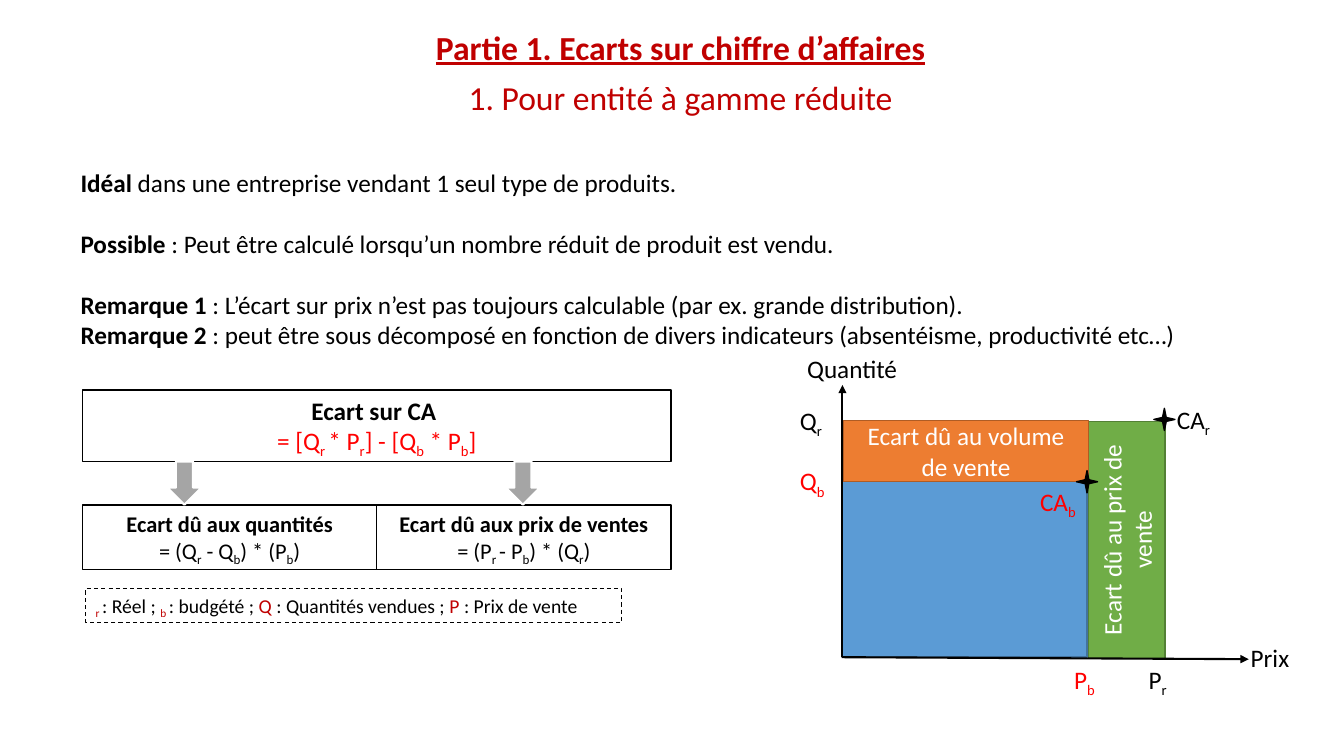
from dataclasses import dataclass
from lxml import etree
from pptx import Presentation
from pptx.dml.color import RGBColor
from pptx.enum.dml import MSO_LINE
from pptx.enum.shapes import MSO_CONNECTOR, MSO_SHAPE
from pptx.enum.text import MSO_ANCHOR, PP_ALIGN
from pptx.oxml.ns import qn
from pptx.util import Cm, Pt

RECT, ARROW, STAR = MSO_SHAPE.RECTANGLE, MSO_SHAPE.DOWN_ARROW, MSO_SHAPE.STAR_4_POINT
LEFT, CENTER = PP_ALIGN.LEFT, PP_ALIGN.CENTER
TOP, MIDDLE = MSO_ANCHOR.TOP, MSO_ANCHOR.MIDDLE
STRAIGHT, DASH = MSO_CONNECTOR.STRAIGHT, MSO_LINE.DASH
BLACK, WHITE, RED, DARK_RED = "000000", "FFFFFF", "FF0000", "C00000"


def rgb(value):
    return RGBColor.from_string(value)


@dataclass
class Span:
    text: str
    color: str = BLACK
    bold: bool = False
    underline: bool = False
    subscript: bool = False


def formula(text, color=BLACK):
    return [Span(part, color, subscript=index % 2 == 1)
            for index, part in enumerate(text.split("|")) if part]


class SlideBuilder:
    font = "Calibri"

    def __init__(self, deck):
        self.page = deck.slides.add_slide(deck.slide_layouts[5])

    def fill_text(self, frame, lines, size=18, align=LEFT, anchor=TOP):
        frame.word_wrap = True
        frame.vertical_anchor = anchor
        for index, spans in enumerate(lines):
            para = frame.paragraphs[0] if index == 0 else frame.add_paragraph()
            para.alignment = align
            for item in spans:
                span = para.add_run()
                span.text = item.text
                span.font.name = self.font
                span.font.size = Pt(size)
                span.font.bold = item.bold
                span.font.underline = item.underline
                span.font.color.rgb = rgb(item.color)
                if item.subscript:
                    span.font._element.set("baseline", "-25000")

    def title(self, left, top, width, height, lines):
        box = self.page.shapes.title
        box.left, box.top, box.width, box.height = map(Cm, (left, top, width, height))
        self.fill_text(box.text_frame, lines, 24, CENTER)
        for para in box.text_frame.paragraphs:
            para.line_spacing = 0.9
            para.space_before = Pt(10)

    def text(self, left, top, width, height, lines):
        box = self.page.shapes.add_textbox(*map(Cm, (left, top, width, height)))
        self.fill_text(box.text_frame, lines)
        return box.text_frame

    def shape(self, kind, left, top, width, height, fill, line, weight=1):
        box = self.page.shapes.add_shape(kind, *map(Cm, (left, top, width, height)))
        box.shadow.inherit = False
        if fill:
            box.fill.solid()
            box.fill.fore_color.rgb = rgb(fill)
        else:
            box.fill.background()
        box.line.color.rgb = rgb(line)
        box.line.width = Pt(weight)
        return box

    def axis(self, *ends):
        line = self.page.shapes.add_connector(STRAIGHT, *map(Cm, ends))
        line.line.color.rgb = rgb(BLACK)
        line.line.width = Pt(1.5)
        properties = line._element.spPr
        etree.SubElement(properties.find(qn("a:ln")), qn("a:tailEnd"), type="triangle")
        etree.SubElement(properties, qn("a:effectLst"))


def add_texts(slide):
    slide.title(4.45, 0.66, 25.4, 2.67, [
        [Span("Partie 1. Ecarts sur chiffre d’affaires", DARK_RED, True, True)],
        [Span("1. Pour entité à gamme réduite", DARK_RED)],
    ])
    remarks = [
        ("Idéal", " dans une entreprise vendant 1 seul type de produits."),
        ("Possible", " : Peut être calculé lorsqu’un nombre réduit de produit est vendu."),
        ("Remarque 1", " : L’écart sur prix n’est pas toujours calculable (par ex. grande distribution)."),
        ("Remarque 2 ", ": peut être sous décomposé en fonction de divers indicateurs "
                        "(absentéisme, productivité etc…)"),
    ]
    frame = slide.text(1.78, 4.09, 30.66, 4.88,
                       [[Span(head, bold=True), Span(rest)] for head, rest in remarks])
    for para in frame.paragraphs[1:3]:
        para.space_before = Pt(22)


def add_breakdown(slide):
    left, width = 2.08, 14.83
    half = width / 2
    boxes = [
        (left, 9.83, width, 1.8, 18, "Ecart sur CA ", "= [Q|r |* P|r|] - [Q|b| * P|b|]", RED),
        (left, 12.73, half, 1.63, 16, "Ecart dû aux quantités",
         "= (Q|r| - Q|b|) * (P|b|)", BLACK),
        (left + half, 12.73, half, 1.63, 16, "Ecart dû aux prix de ventes",
         "= (P|r |- P|b|) * (Q|r|)", BLACK),
    ]
    for x, y, wide, high, size, heading, expression, color in boxes:
        box = slide.shape(RECT, x, y, wide, high, WHITE, BLACK)
        slide.fill_text(box.text_frame, [[Span(heading, bold=True)], formula(expression, color)],
                        size, CENTER)
    for x in (4.22, 12.75):
        slide.shape(ARROW, x, 11.63, 0.86, 1.09, "A5A5A5", WHITE, 1.5)

    legend = slide.shape(RECT, 2.16, 14.83, 13.51, 0.86, None, BLACK, 0.75)
    legend.line.dash_style = DASH
    slide.fill_text(legend.text_frame, [[
        Span("r ", DARK_RED, subscript=True), Span(": Réel ; "),
        Span("b ", DARK_RED, subscript=True), Span(": budgété ; "),
        Span("Q ", DARK_RED), Span(": Quantités vendues ; "),
        Span("P ", DARK_RED), Span(": Prix de vente"),
    ]], 14)


def add_diagram(slide):
    slide.shape(RECT, 21.23, 12.14, 6.17, 4.42, "5B9BD5", "43739E")
    price = slide.shape(RECT, 27.43, 10.62, 1.93, 5.97, "70AD47", "538035")
    slide.fill_text(price.text_frame, [[Span("Ecart dû au prix de vente", WHITE)]],
                    align=CENTER, anchor=MIDDLE)
    price.text_frame._txBody.bodyPr.set("vert", "vert270")
    slide.axis(21.23, 16.56, 21.23, 9.7)
    slide.axis(21.21, 16.56, 31.47, 16.61)
    volume = slide.shape(RECT, 21.26, 10.59, 6.17, 1.55, "ED7D31", "AF5C24")
    slide.fill_text(volume.text_frame, [[Span("Ecart dû au volume de vente", WHITE)]],
                    align=CENTER, anchor=MIDDLE)
    for x, y in ((27.13, 11.86), (29.08, 10.29)):
        slide.shape(STAR, x, y, 0.53, 0.56, BLACK, BLACK)
    labels = [
        ("Quantité", 20.09, 8.79, 3.4, BLACK),
        ("Prix", 31.27, 16.05, 2.4, BLACK),
        ("P|b", 26.82, 16.61, 1.32, RED),
        ("P|r", 28.7, 16.61, 2.4, BLACK),
        ("Q|b", 19.91, 11.61, 2.4, RED),
        ("Q|r", 19.91, 10.08, 2.4, BLACK),
        ("CA|b", 25.96, 12.12, 2.4, RED),
        ("CA|r", 29.41, 10.06, 2.4, BLACK),
    ]
    for label, x, y, width, color in labels:
        slide.text(x, y, width, 1.02, [formula(label, color)])


def main():
    deck = Presentation()
    deck.slide_width, deck.slide_height = Cm(33.87), Cm(19.05)
    slide = SlideBuilder(deck)
    add_texts(slide)
    add_breakdown(slide)
    add_diagram(slide)
    deck.save("out.pptx")


if __name__ == "__main__":
    main()
